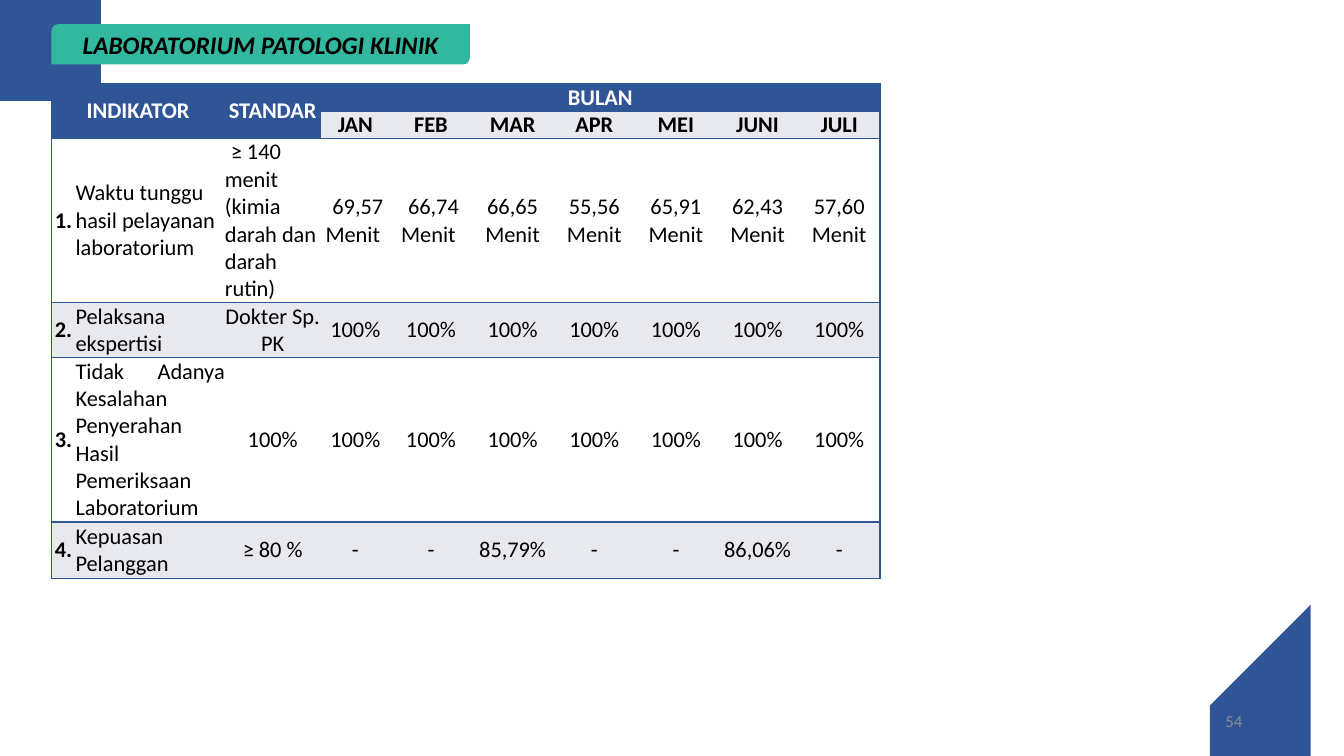
import pptx
import pptx.util
import pptx.dml.color
import pptx.enum.shapes
import pptx.enum.text
import pptx.oxml.ns
import lxml.etree

Inches = pptx.util.Inches
ALIGN = pptx.enum.text.PP_ALIGN
MIDDLE = pptx.enum.text.MSO_ANCHOR.MIDDLE

COLORS = {"navy": "2F5597", "teal": "32B89E", "band": "E8E9EF",
          "white": "FFFFFF", "black": "000000", "gray": "8C8C8C"}
FONT = "Calibri"
NO_GRID_STYLE = "{2D5ABB26-0587-4C30-8999-92F81FD0307C}"

TITLE = "LABORATORIUM PATOLOGI KLINIK"
PAGE_NUMBER = "54"
MONTHS = ["JAN", "FEB", "MAR", "APR", "MEI", "JUNI", "JULI"]
# text, first row, first column, last row, last column
HEADINGS = [("INDIKATOR", 0, 0, 1, 1), ("STANDAR", 0, 2, 1, 2), ("BULAN", 0, 3, 0, 9)]
INDICATORS = [
    ("1.", "Waktu tunggu hasil pelayanan laboratorium",
     "≥ 140 menit (kimia darah dan darah rutin)",
     " 69,57 Menit ", " 66,74 Menit ", "66,65 Menit", "55,56 Menit",
     "65,91 Menit", "62,43 Menit", "57,60 Menit"),
    ("2.", "Pelaksana ekspertisi", "Dokter Sp. PK", *["100%"] * 7),
    ("3.", "Tidak Adanya Kesalahan Penyerahan Hasil Pemeriksaan Laboratorium",
     "100%", *["100%"] * 7),
    ("4.", "Kepuasan Pelanggan", "≥ 80 %", "-", "-", "85,79%", "-", "-", "86,06%", "-"),
]
COLUMN_WIDTHS = [0.24, 1.48, 0.95, 0.69] + [0.81] * 6
ROW_HEIGHTS = [0.27, 0.27, 1.63, 0.54, 1.63, 0.56]

# straight points before the rounded corner, its Bezier control points, points after it
CORNERS = [
    ([(13.33, 7.5), (12.11, 7.5)],
     [(12.04, 7.36), (11.9, 7.06), (12.03, 6.69), (12.34, 6.55)], [(13.33, 6.09)]),
    ([(0, 0), (1.22, 0)],
     [(1.29, 0.15), (1.43, 0.46), (1.29, 0.83), (0.99, 0.97)], [(0, 1.42)]),
]


def rgb(color):
    return pptx.dml.color.RGBColor.from_string(COLORS[color])


def write(frame, text, size=16, color="black", bold=False, italic=False,
          align=ALIGN.CENTER, indent=0):
    frame.word_wrap = True
    paragraph = frame.paragraphs[0]
    paragraph.alignment = align
    if indent:
        paragraph._p.get_or_add_pPr().set("indent", str(Inches(indent)))
    run = paragraph.add_run()
    run.text = text
    run.font.name = FONT
    run.font.size = pptx.util.Pt(size)
    run.font.bold = bold
    run.font.italic = italic
    run.font.color.rgb = rgb(color)


def paint(shape, color):
    shape.shadow.inherit = False
    shape.fill.solid()
    shape.fill.fore_color.rgb = rgb(color)
    shape.line.fill.background()


def bezier(controls, steps=24):
    """Return points along a cubic curve."""
    weights = (1, 3, 3, 1)
    return [tuple(sum(w * (1 - t) ** (3 - i) * t ** i * point[axis]
                      for i, (w, point) in enumerate(zip(weights, controls)))
                  for axis in (0, 1))
            for t in (step / steps for step in range(steps + 1))]


def add_corner(slide, before, curve, after):
    points = before + bezier(curve) + after
    builder = slide.shapes.build_freeform(*points[0], scale=Inches(1))
    builder.add_line_segments(points[1:], close=True)
    paint(builder.convert_to_shape(), "navy")


def add_borders(cell, sides):
    """Draw thin navy lines; sides must keep the order L, R, T, B."""
    properties = cell._tc.get_or_add_tcPr()
    qn = pptx.oxml.ns.qn
    for side in sides:
        line = lxml.etree.SubElement(properties, qn("a:ln" + side), w=str(pptx.util.Pt(1)))
        fill = lxml.etree.SubElement(line, qn("a:solidFill"))
        lxml.etree.SubElement(fill, qn("a:srgbClr"), val=COLORS["navy"])


def format_cell(cell, fill, sides):
    add_borders(cell, sides)
    cell.fill.solid()
    cell.fill.fore_color.rgb = rgb(fill)
    cell.vertical_anchor = MIDDLE
    cell.margin_left = cell.margin_right = cell.margin_top = cell.margin_bottom = 0


def add_indicator_table(slide):
    last = len(COLUMN_WIDTHS) - 1
    table = slide.shapes.add_table(
        len(ROW_HEIGHTS), len(COLUMN_WIDTHS), Inches(0.51), Inches(0.83),
        Inches(sum(COLUMN_WIDTHS)), Inches(sum(ROW_HEIGHTS))).table
    table.first_row = table.horz_banding = False
    table._tbl.tblPr.find(pptx.oxml.ns.qn("a:tableStyleId")).text = NO_GRID_STYLE
    for column, width in zip(table.columns, COLUMN_WIDTHS):
        column.width = Inches(width)
    for row, height in zip(table.rows, ROW_HEIGHTS):
        row.height = Inches(height)

    heading_ends = {(top, left): right for _, top, left, _, right in HEADINGS}
    for r in range(len(ROW_HEIGHTS)):
        for c in range(last + 1):
            heading = r == 0 or (r == 1 and c < 3)
            fill = "navy" if heading else "band" if r % 2 else "white"
            right_end = heading_ends.get((r, c), c)
            sides = "L" * (c == 0) + "R" * (right_end == last) + "TB"
            format_cell(table.cell(r, c), fill, sides)

    for text, top, left, bottom, right in HEADINGS:
        table.cell(top, left).merge(table.cell(bottom, right))
        write(table.cell(top, left).text_frame, text, color="white", bold=True)
    for c, month in enumerate(MONTHS, start=3):
        write(table.cell(1, c).text_frame, month, bold=True)
    for r, indicator in enumerate(INDICATORS, start=2):
        for c, text in enumerate(indicator):
            align, indent = ALIGN.CENTER, 0
            if c == 1:
                align = ALIGN.LEFT if r == 2 else ALIGN.JUSTIFY
            elif c == 2 and r == 2:
                align, indent = ALIGN.LEFT, 0.06
            write(table.cell(r, c).text_frame, text, bold=c == 0, align=align, indent=indent)


def main():
    presentation = pptx.Presentation()
    presentation.slide_width = Inches(13.33)
    presentation.slide_height = Inches(7.5)
    slide = presentation.slides.add_slide(presentation.slide_layouts[6])

    for corner in CORNERS:
        add_corner(slide, *corner)
    add_indicator_table(slide)

    title = slide.shapes.add_shape(
        pptx.enum.shapes.MSO_SHAPE.ROUND_2_DIAG_RECTANGLE,
        Inches(0.51), Inches(0.24), Inches(4.15), Inches(0.4))
    paint(title, "teal")
    title.text_frame.vertical_anchor = MIDDLE
    write(title.text_frame, TITLE, size=18, bold=True, italic=True)

    page = slide.shapes.add_textbox(Inches(9.42), Inches(6.95), Inches(3), Inches(0.4))
    page.text_frame.vertical_anchor = MIDDLE
    write(page.text_frame, PAGE_NUMBER, size=12, color="gray", align=ALIGN.RIGHT)

    presentation.save("out.pptx")


if __name__ == "__main__":
    main()
